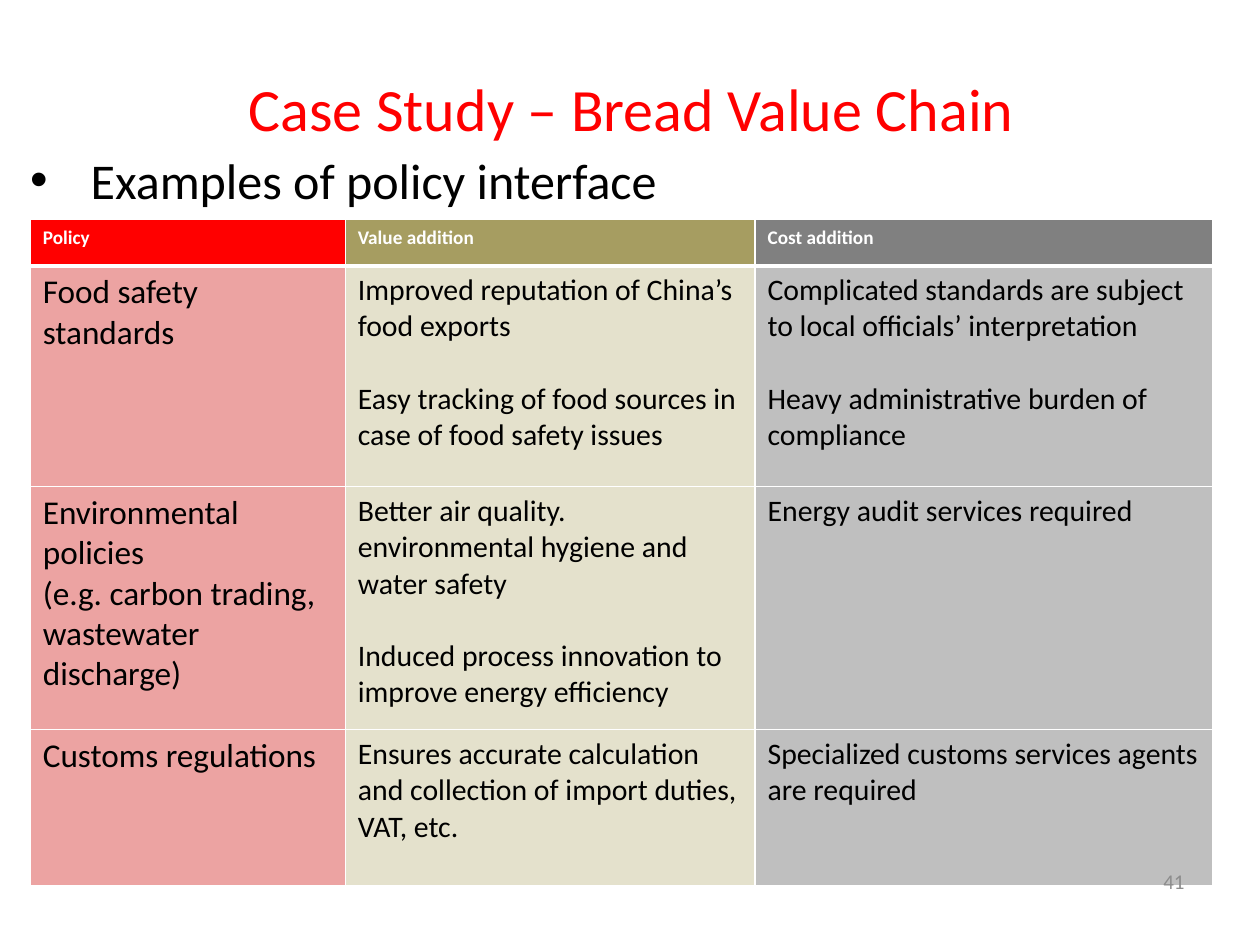
"""Build the bread value chain slide with its policy table."""
import pptx
import pptx.dml.color
import pptx.enum.text
import pptx.oxml.ns
import pptx.util
from lxml import etree

Cm, Pt = pptx.util.Cm, pptx.util.Pt
ALIGN = pptx.enum.text.PP_ALIGN
ANCHOR = pptx.enum.text.MSO_ANCHOR

TITLE = "Case Study – Bread Value Chain"
TOPIC = "Examples of policy interface"
PAGE_NUMBER = "41"
HEADINGS = ["Policy", "Value addition", "Cost addition"]
POLICIES = [
    (["Food safety standards"],
     ["Improved reputation of China’s food exports",
      "Easy tracking of food sources in case of food safety issues"],
     ["Complicated standards are subject to local officials’ interpretation",
      "Heavy administrative burden of compliance"]),
    (["Environmental policies", "(e.g. carbon trading, wastewater discharge)"],
     ["Better air quality. environmental hygiene and water safety",
      "Induced process innovation to improve energy efficiency"],
     ["Energy audit services required"]),
    (["Customs regulations"],
     ["Ensures accurate calculation and collection of import duties, VAT, etc."],
     ["Specialized customs services agents are required"]),
]
HEADING_FILLS = ["FF0000", "A69D61", "808080"]
BODY_FILLS = ["ECA3A2", "E4E1CC", "BFBFBF"]
BODY_SIZES = [19, 17, 17]
BODY_GAPS = [0, 20.7, 20.7]
COLUMN_WIDTHS = [6.35, 8.26, 9.22]
ROW_HEIGHTS = [0.94, 4.45, 4.9, 3.15]
LEFT, TABLE_TOP = 0.61, 4.42


def rgb(code):
    return pptx.dml.color.RGBColor.from_string(code)


def write(frame, lines, size, color, bold=False, align=ALIGN.LEFT, gap=0):
    frame.word_wrap = True
    for index, line in enumerate(lines):
        paragraph = frame.add_paragraph() if index else frame.paragraphs[0]
        paragraph.alignment = align
        paragraph.space_before = Pt(gap if index else 0)
        run = paragraph.add_run()
        run.text = line
        run.font.name = "Calibri"
        run.font.size = Pt(size)
        run.font.bold = bold
        run.font.color.rgb = rgb(color)


def add_text(slide, box, line, size, color, align, inset=(0, 0), anchor=ANCHOR.TOP):
    frame = slide.shapes.add_textbox(*map(Cm, box)).text_frame
    frame.margin_left = frame.margin_right = Cm(inset[0])
    frame.margin_top = frame.margin_bottom = Cm(inset[1])
    frame.vertical_anchor = anchor
    write(frame, [line], size, color, align=align)
    return frame.paragraphs[0]


def add_bullet(paragraph, indent):
    properties = paragraph._p.get_or_add_pPr()
    properties.set("marL", str(Cm(indent)))
    properties.set("indent", str(-Cm(indent)))
    font = etree.SubElement(properties, pptx.oxml.ns.qn("a:buFont"))
    font.set("typeface", "Arial")
    etree.SubElement(properties, pptx.oxml.ns.qn("a:buChar")).set("char", "•")


def add_borders(cell, widths):
    properties = cell._tc.get_or_add_tcPr()
    for side, width in widths.items():
        line = etree.SubElement(properties, pptx.oxml.ns.qn(f"a:ln{side}"))
        line.set("w", str(Pt(width)))
        fill = etree.SubElement(line, pptx.oxml.ns.qn("a:solidFill"))
        etree.SubElement(fill, pptx.oxml.ns.qn("a:srgbClr")).set("val", "FFFFFF")


def add_policy_table(slide):
    policy_table = slide.shapes.add_table(
        len(ROW_HEIGHTS), len(COLUMN_WIDTHS), Cm(LEFT), Cm(TABLE_TOP),
        Cm(sum(COLUMN_WIDTHS)), Cm(sum(ROW_HEIGHTS))).table
    for column, width in zip(policy_table.columns, COLUMN_WIDTHS):
        column.width = Cm(width)
    for row, height in zip(policy_table.rows, ROW_HEIGHTS):
        row.height = Cm(height)
    for r, entries in enumerate([[[heading] for heading in HEADINGS], *POLICIES]):
        for c, lines in enumerate(entries):
            cell = policy_table.cell(r, c)
            add_borders(cell, {"L": 1, "R": 1, "T": 3 if r == 1 else 1, "B": 1 if r else 3})
            cell.fill.solid()
            cell.fill.fore_color.rgb = rgb((BODY_FILLS if r else HEADING_FILLS)[c])
            if r:
                write(cell.text_frame, lines, BODY_SIZES[c], "000000", gap=BODY_GAPS[c])
            else:
                write(cell.text_frame, lines, 11, "FFFFFF", bold=True)


def main():
    deck = pptx.Presentation()
    deck.slide_width, deck.slide_height = Cm(25.4), Cm(19.05)
    slide = deck.slides.add_slide(deck.slide_layouts[6])
    topic = add_text(slide, (LEFT, 3.02, sum(COLUMN_WIDTHS), 4.67), TOPIC, 28.6,
                     "000000", ALIGN.LEFT)
    add_bullet(topic, 1.22)
    add_text(slide, (1.73, 1.32, 22, 1.73), TITLE, 34.3, "FF0000", ALIGN.CENTER, (0, 0.13))
    add_policy_table(slide)
    add_text(slide, (18.21, 17.27, 5.92, 0.97), PAGE_NUMBER, 12, "8C8C8C", ALIGN.RIGHT,
             (0.25, 0.13), ANCHOR.MIDDLE)
    deck.save("out.pptx")


if __name__ == "__main__":
    main()
